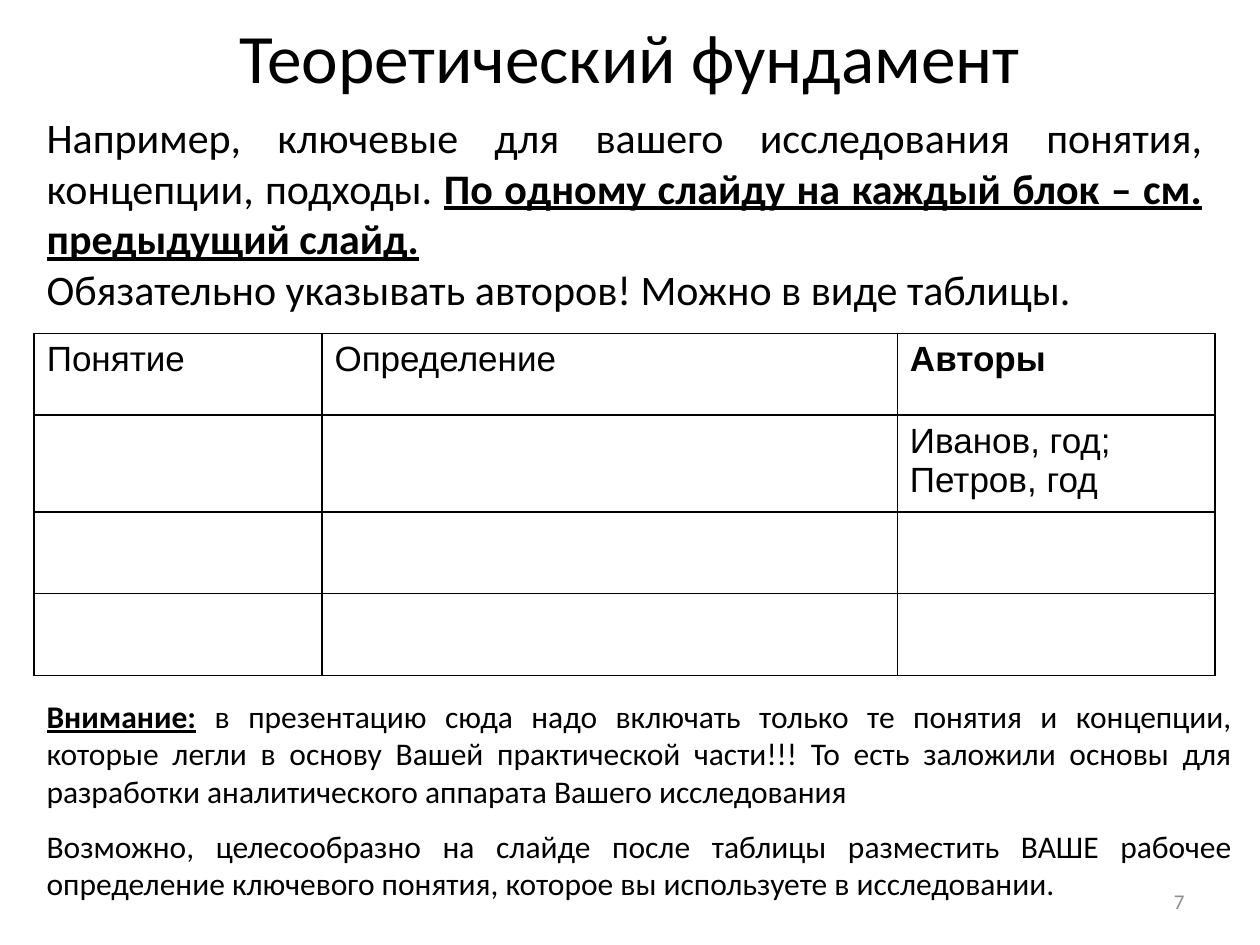
from lxml import etree
from pptx import Presentation
from pptx.dml.color import RGBColor
from pptx.enum.text import MSO_ANCHOR, PP_ALIGN
from pptx.oxml.ns import qn
from pptx.util import Cm, Pt

LEFT, CENTER, RIGHT, JUSTIFY = PP_ALIGN.LEFT, PP_ALIGN.CENTER, PP_ALIGN.RIGHT, PP_ALIGN.JUSTIFY
TOP, MIDDLE = MSO_ANCHOR.TOP, MSO_ANCHOR.MIDDLE
BLACK, GRAY = "000000", "8C8C8C"
MARGIN = 0.69
COLUMNS = [5.8, 11.6, 6.4]
ROWS = [1.65, 1.94, 1.65, 1.65]
CELLS = [
    ["Понятие", "Определение", "Авторы"],
    ["", "", "Иванов, год; Петров, год"],
    ["", "", ""],
    ["", "", ""],
]
INTRO = [
    (JUSTIFY, [
        ("Например, ключевые для вашего исследования понятия, концепции, подходы. ", False),
        ("По одному слайду на каждый блок – см. предыдущий слайд.", True),
    ]),
    (LEFT, [("Обязательно указывать авторов! Можно в виде таблицы.", False)]),
]
WARNING = [(JUSTIFY, [
    ("Внимание:", True),
    (" в презентацию сюда надо включать только те понятия и концепции, которые легли "
     "в основу Вашей практической части!!! То есть заложили основы для разработки "
     "аналитического аппарата Вашего исследования", False),
])]
ADVICE = [(JUSTIFY, [
    ("Возможно, целесообразно на слайде после таблицы разместить ВАШЕ рабочее "
     "определение ключевого понятия, которое вы используете в исследовании.", False),
])]


def rgb(color):
    return RGBColor.from_string(color)


def format_run(r, size, font="Calibri", color=BLACK, bold=False, underline=False):
    r.font.size = Pt(size)
    r.font.name = font
    r.font.color.rgb = rgb(color)
    r.font.bold = bold
    r.font.underline = underline


def set_title(s, text):
    sp = s.shapes.title
    sp.left, sp.top, sp.width, sp.height = Cm(1.27), Cm(0.13), Cm(22.86), Cm(2)
    tf = sp.text_frame
    tf.text = text
    tf.vertical_anchor = MIDDLE
    p = tf.paragraphs[0]
    p.alignment = CENTER
    format_run(p.runs[0], 39.6)


def add_text(s, left, top, width, height, paragraphs, size, color=BLACK, anchor=TOP):
    sp = s.shapes.add_textbox(Cm(left), Cm(top), Cm(width), Cm(height))
    tf = sp.text_frame
    tf.word_wrap = True
    tf.vertical_anchor = anchor
    for i, (align, runs) in enumerate(paragraphs):
        p = tf.add_paragraph() if i else tf.paragraphs[0]
        p.alignment = align
        for text, strong in runs:
            r = p.add_run()
            r.text = text
            format_run(r, size, color=color, bold=strong, underline=strong)


def set_borders(cell):
    tc_pr = cell._tc.get_or_add_tcPr()
    for i, side in enumerate(("a:lnL", "a:lnR", "a:lnT", "a:lnB")):
        ln = etree.Element(qn(side), w=str(Pt(1)))
        fill = etree.SubElement(ln, qn("a:solidFill"))
        etree.SubElement(fill, qn("a:srgbClr"), val=BLACK)
        tc_pr.insert(i, ln)


def add_grid(s, left, top):
    frame = s.shapes.add_table(len(ROWS), len(COLUMNS), Cm(left), Cm(top),
                               Cm(sum(COLUMNS)), Cm(sum(ROWS)))
    table = frame.table
    table.first_row = table.horz_banding = False
    for column, width in zip(table.columns, COLUMNS):
        column.width = Cm(width)
    for row, height, texts in zip(table.rows, ROWS, CELLS):
        row.height = Cm(height)
        for cell, text in zip(row.cells, texts):
            cell.fill.background()
            set_borders(cell)
            if text:
                cell.text_frame.text = text
                r = cell.text_frame.paragraphs[0].runs[0]
                format_run(r, 20, font="Arial", bold=text == "Авторы")


def main():
    prs = Presentation()
    prs.slide_width, prs.slide_height = Cm(25.4), Cm(19.05)
    s = prs.slides.add_slide(prs.slide_layouts[5])
    set_title(s, "Теоретический фундамент")
    add_text(s, MARGIN, 2.13, 23.8, 4.37, INTRO, 24)
    add_grid(s, MARGIN, 6.72)
    add_text(s, MARGIN, 13.92, 24.4, 2.56, WARNING, 18)
    add_text(s, MARGIN, 16.54, 24.4, 1.8, ADVICE, 18)
    add_text(s, 18.2, 17.66, 5.93, 1.01, [(RIGHT, [("7", False)])], 12, GRAY, MIDDLE)
    prs.save("out.pptx")


if __name__ == "__main__":
    main()
